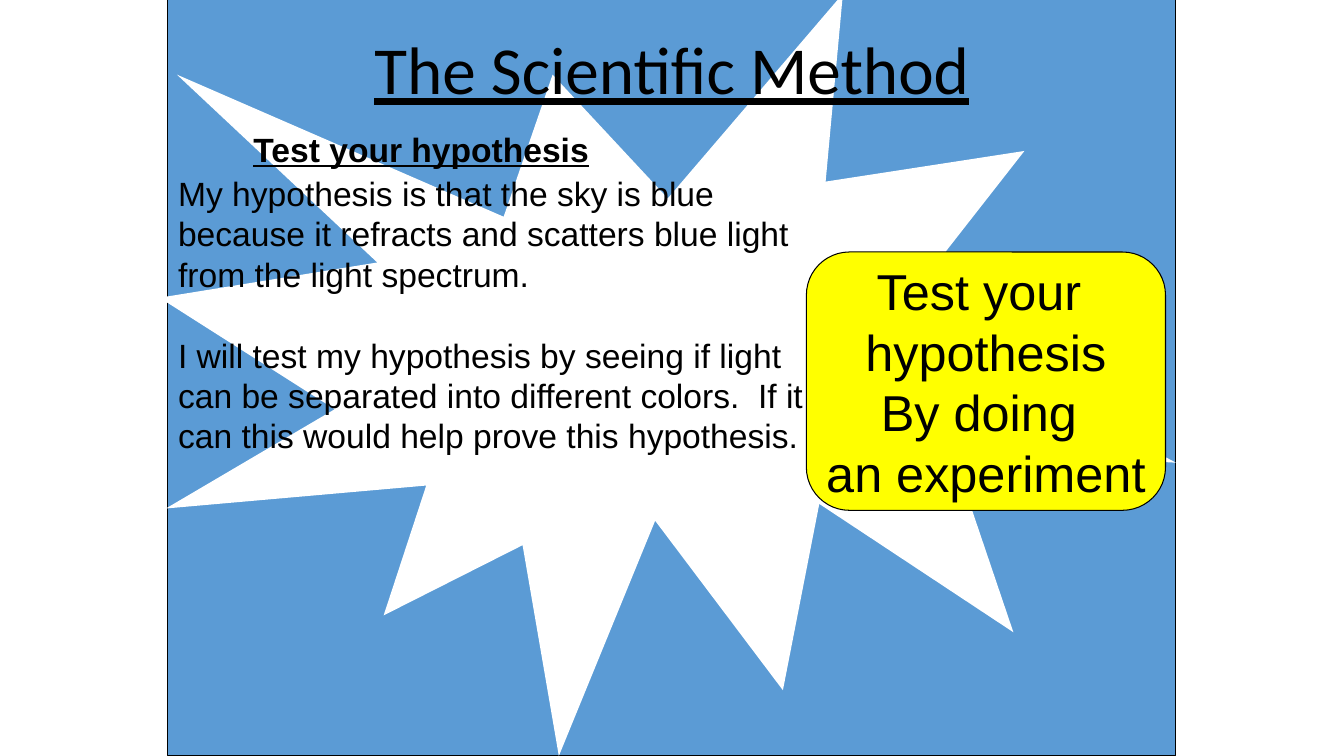
from pptx import Presentation
from pptx.dml.color import RGBColor
from pptx.enum.shapes import MSO_SHAPE
from pptx.enum.text import MSO_ANCHOR, MSO_AUTO_SIZE, PP_ALIGN
from pptx.util import Emu, Pt
from lxml.etree import SubElement
from pptx.oxml.ns import qn

PX = 9525
BLACK = RGBColor(0x00, 0x00, 0x00)
WHITE = RGBColor(0xFF, 0xFF, 0xFF)
BLUE = RGBColor(0x5B, 0x9B, 0xD5)
YELLOW = RGBColor(0xFF, 0xFF, 0x00)

TITLE = {"name": "Calibri", "size": Pt(48), "underline": True}
HEADING = {"name": "Arial", "size": Pt(24), "bold": True, "underline": True}
BODY = {"name": "Arial", "size": Pt(24)}
CALLOUT = {"name": "Arial", "size": Pt(36)}


def px(*lengths):
    return [Emu(n * PX) for n in lengths]


def place(sp, box):
    sp.left, sp.top, sp.width, sp.height = px(*box)


def add_panel(s, kind, box, fill, outlined=True):
    sp = s.shapes.add_shape(kind, *px(*box))
    sp.shadow.inherit = False
    sp.fill.solid()
    sp.fill.fore_color.rgb = fill
    if outlined:
        sp.line.color.rgb = BLACK
        sp.line.width = Pt(0.75)
    else:
        sp.line.fill.background()
    return sp


def write(sp, lines, font, para, wrap=True, anchor=MSO_ANCHOR.TOP):
    tf = sp.text_frame
    tf.auto_size = MSO_AUTO_SIZE.NONE
    tf.word_wrap = wrap
    tf.vertical_anchor = anchor
    for i, line in enumerate(lines):
        p = tf.paragraphs[0] if i == 0 else tf.add_paragraph()
        for key, value in para.items():
            setattr(p, key, value)
        r = p.add_run()
        r.text = line
        r.font.color.rgb = BLACK
        for key, value in font.items():
            setattr(r.font, key, value)


def remove_bullets(sp):
    for p in sp.text_frame.paragraphs:
        pPr = p._p.get_or_add_pPr()
        pPr.set("marL", "0")
        pPr.set("indent", "0")
        SubElement(pPr, qn("a:buNone"))


def main():
    prs = Presentation()
    prs.slide_width, prs.slide_height = px(1280, 720)
    s = prs.slides.add_slide(prs.slide_layouts[1])
    title, body = s.placeholders

    add_panel(s, MSO_SHAPE.RECTANGLE, (160, 0, 960, 720), BLUE)
    add_panel(s, MSO_SHAPE.EXPLOSION1, (152, -6, 968, 726), WHITE, outlined=False)
    for sp in (title, body):
        s.shapes._spTree.append(sp._element)

    place(title, (160, 30, 960, 96))
    write(title, ["The Scientific Method"], TITLE,
          {"alignment": PP_ALIGN.CENTER, "line_spacing": 0.9})

    callout = add_panel(s, MSO_SHAPE.FLOWCHART_ALTERNATE_PROCESS,
                        (768, 240, 342, 246), YELLOW)
    write(callout, ["Test your ", "hypothesis", "By doing ", "an experiment"],
          CALLOUT, {"alignment": PP_ALIGN.CENTER}, wrap=False,
          anchor=MSO_ANCHOR.MIDDLE)

    heading = s.shapes.add_textbox(*px(232, 118, 341, 48))
    write(heading, ["Test your hypothesis"], HEADING,
          {"alignment": PP_ALIGN.LEFT}, wrap=False)

    place(body, (160, 160, 640, 281))
    write(body, [
        "My hypothesis is that the sky is blue because it refracts and scatters "
        "blue light from the light spectrum.",
        "I will test my hypothesis by seeing if light can be separated into "
        "different colors.  If it can this would help prove this hypothesis.",
    ], BODY, {"alignment": PP_ALIGN.LEFT, "space_before": Pt(0)})
    body.text_frame.paragraphs[1].space_before = Pt(29)
    remove_bullets(body)

    prs.save("out.pptx")


if __name__ == "__main__":
    main()
